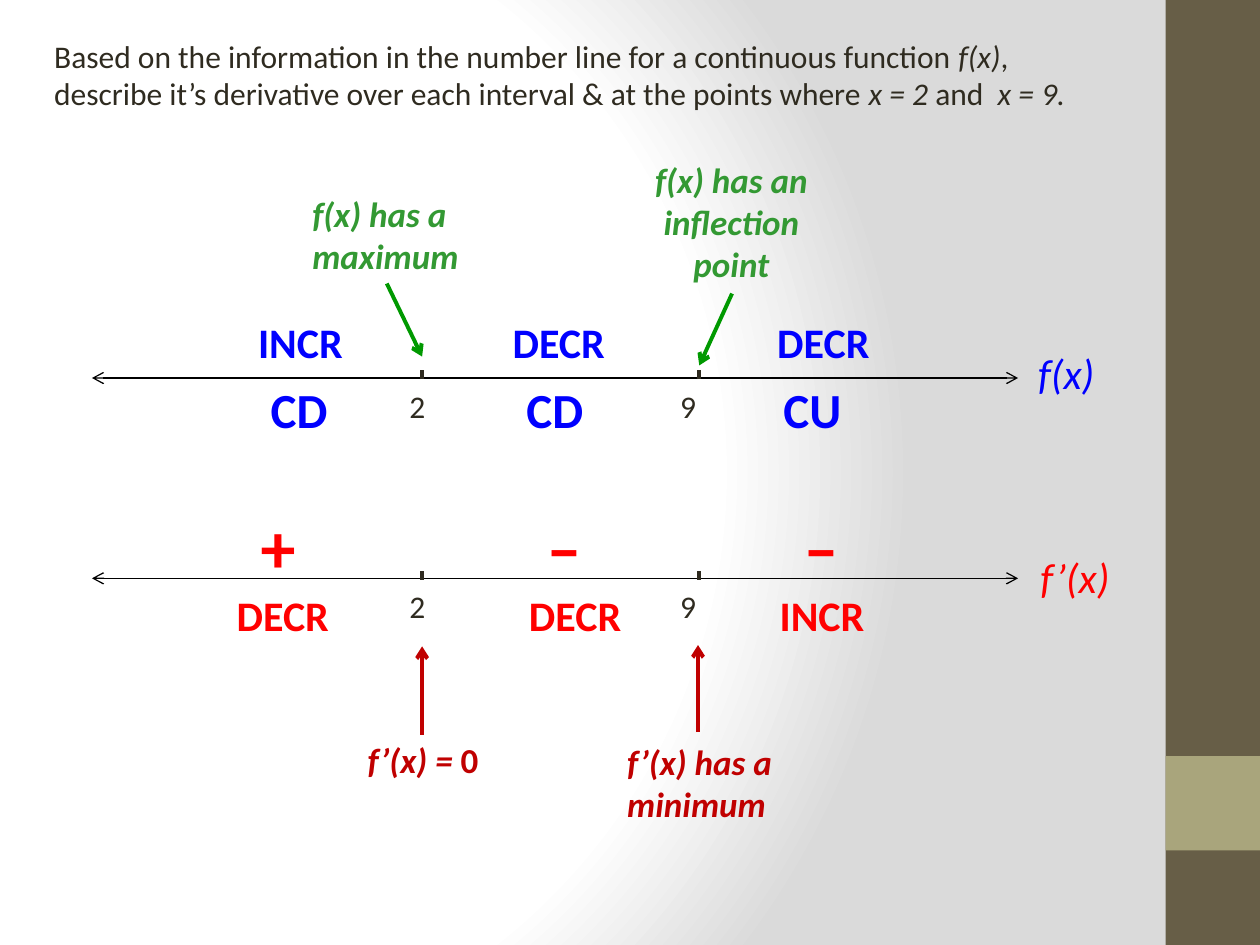
from lxml.etree import SubElement as Sub
from pptx import Presentation
from pptx.dml.color import RGBColor as Rgb
from pptx.enum.shapes import MSO_CONNECTOR as Link, MSO_SHAPE as Kind
from pptx.enum.text import MSO_ANCHOR as Anchor, MSO_AUTO_SIZE as Fit, PP_ALIGN as Align
from pptx.oxml.ns import qn
from pptx.util import Inches, Pt

HUES = {
    "white": "FFFFFF", "gray": "DADADA", "brown": "675E47", "olive": "A9A57C",
    "ink": "2F2B20", "black": "000000", "blue": "0000FF", "red": "FF0000",
    "wine": "C00000", "green": "339933", "leaf": "009900",
}


def hue(name):
    return Rgb.from_string(HUES[name])


def paint(slide):
    fill = slide.background.fill
    fill.gradient()
    grad = slide.background._cSld.find(".//" + qn("a:gradFill"))
    for node in list(grad):
        grad.remove(node)
    stops = Sub(grad, qn("a:gsLst"))
    for pos, name in ((0, "white"), (75000, "white"), (100000, "gray")):
        stop = Sub(stops, qn("a:gs"), pos=str(pos))
        Sub(stop, qn("a:srgbClr"), val=HUES[name])
    track = Sub(grad, qn("a:path"), path="circle")
    Sub(track, qn("a:fillToRect"), l="20000", t="50000", r="100000", b="50000")


def bar(slide, box, name):
    shape = slide.shapes.add_shape(Kind.RECTANGLE, *map(Inches, box))
    shape.shadow.inherit = False
    shape.fill.solid()
    shape.fill.fore_color.rgb = hue(name)
    shape.line.fill.background()


def write(shape, runs, size=18, color="ink", bold=False, slant=False, align=Align.LEFT, tabs=()):
    frame = shape.text_frame
    frame.word_wrap = True
    frame.auto_size = Fit.NONE
    frame.vertical_anchor = Anchor.TOP
    para = frame.paragraphs[0]
    para.alignment = align
    if tabs:
        stops = Sub(para._p.get_or_add_pPr(), qn("a:tabLst"))
        for tab in tabs:
            Sub(stops, qn("a:tab"), pos=str(Inches(tab)), algn="l")
    for text, tilt in [(runs, slant)] if isinstance(runs, str) else runs:
        if text == "\n":
            para.add_line_break()
            continue
        run = para.add_run()
        run.text = text
        font = run.font
        font.name, font.size = "Calibri", Pt(size)
        font.bold, font.italic = bold, tilt
        font.color.rgb = hue(color)


def label(slide, box, runs, **form):
    write(slide.shapes.add_textbox(*map(Inches, box)), runs, **form)


def line(slide, ends, color, width=2.25, head=False, tail=False):
    link = slide.shapes.add_connector(Link.STRAIGHT, *map(Inches, ends))
    link.line.color.rgb = hue(color)
    link.line.width = Pt(width)
    edge = link.line._get_or_add_ln()
    for tag, shown in (("a:headEnd", head), ("a:tailEnd", tail)):
        if shown:
            Sub(edge, qn(tag), type="arrow")
    Sub(link._element.spPr, qn("a:effectLst"))


def axis(slide, y):
    line(slide, (0.73, y, 8.08, y), "black", 0.75, head=True, tail=True)
    label(slide, (1, y + 0.02, 5.61, 0.4), "\t2\t9", tabs=(2.15, 4.3))
    for x in (3.35, 5.55):
        line(slide, (x, y + 0.01, x, y - 0.06), "ink")


def main():
    deck = Presentation()
    deck.slide_width, deck.slide_height = Inches(10), Inches(7.5)
    slide = deck.slides.add_slide(deck.slide_layouts[5])
    paint(slide)
    bar(slide, (9.25, 0, 0.75, 7.5), "brown")
    bar(slide, (9.25, 6, 0.75, 0.75), "olive")

    title = slide.shapes.title
    title.left, title.top, title.width, title.height = map(Inches, (0.33, 0.24, 9.08, 0.71))
    write(title, [
        ("Based on the information in the number line for a continuous function ", False),
        ("f(x)", True), (", ", False), ("\n", False),
        ("describe it’s derivative over each interval & at the points where ", False),
        ("x = 2 ", True), ("and  ", False), ("x = 9.", True),
    ])

    for y in (3, 4.59):
        axis(slide, y)
    label(slide, (8.14, 2.71, 0.83, 0.46), "f(x)", size=24, color="blue", slant=True)
    label(slide, (8.16, 4.33, 0.83, 0.5), "f’(x)", size=24, color="red", slant=True)

    rows = (
        (1.97, 3.95, 0.77, "+\t–\t–", 40, "red", (2.27, 4.31)),
        (1.78, 4.63, 0.5, "DECR\tDECR\tINCR", 24, "red", (2.32, 4.31)),
        (2.05, 2.96, 0.57, "CD\tCD\tCU", 28, "blue", (2.03, 4.07)),
        (1.95, 2.46, 0.5, "INCR\tDECR\tDECR", 24, "blue", (2.02, 4.12)),
    )
    for x, y, high, text, size, color, tabs in rows:
        label(slide, (x, y, 6, high), text, size=size, color=color, bold=True, tabs=tabs)

    notes = (
        ((3.35, 5.83, 3.35, 5.13), "wine", (2.82, 5.81, 1.38, 0.44),
         [("f’(x) =", True), (" 0", False)], "wine", Align.LEFT),
        ((5.54, 5.81, 5.54, 5.12), "wine", (4.88, 5.83, 1.64, 0.77),
         "f’(x) has a minimum", "wine", Align.LEFT),
        ((3.07, 2.25, 3.35, 2.83), "leaf", (2.38, 1.48, 1.38, 0.77),
         "f(x) has a maximum", "green", Align.LEFT),
        ((5.81, 2.33, 5.55, 2.9), "leaf", (4.93, 1.21, 1.75, 1.11),
         "f(x) has an inflection point", "green", Align.CENTER),
    )
    for ends, shade, box, text, color, align in notes:
        line(slide, ends, shade, tail=True)
        label(slide, box, text, size=20, color=color, bold=True, slant=True, align=align)

    deck.save("out.pptx")


main()
